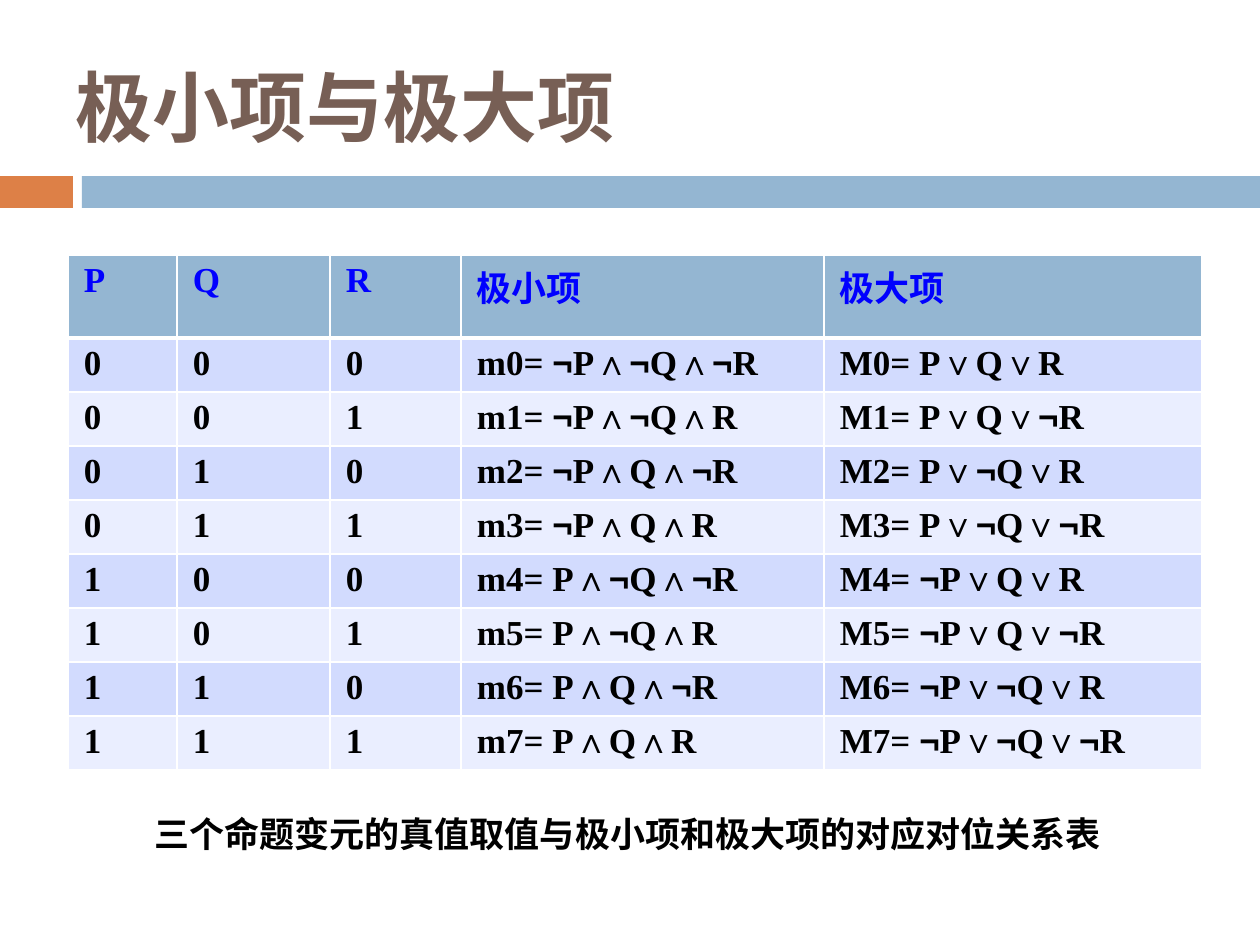
import itertools

import lxml.etree
import pptx
import pptx.dml.color
import pptx.enum.shapes
import pptx.enum.text
import pptx.oxml.ns
import pptx.util

TITLE = "极小项与极大项"
CAPTION = "三个命题变元的真值取值与极小项和极大项的对应对位关系表"
VARIABLES = ["P", "Q", "R"]
HEADERS = VARIABLES + ["极小项", "极大项"]
COLUMN_WIDTHS = [109, 153, 131, 363, 378]
HEADER_HEIGHT, ROW_HEIGHT = 83, 52
TABLE_LEFT, TABLE_TOP = 68, 255
BARS = [(0, 73, "DD8047"), (82, 1178, "94B6D2")]
BAR_TOP, BAR_HEIGHT = 176, 32
HEADER_FILL = "94B6D2"
ROW_FILLS = ["D2DBFE", "EAEEFF"]


def px(length):
    return pptx.util.Emu(length * 914400 // 126)


def color(value):
    return pptx.dml.color.RGBColor.from_string(value)


def write(frame, text, size=20, font="Times New Roman", ink="000000"):
    """Write one bold paragraph, with each ¬ in a run of its own in Arial."""
    para = frame.paragraphs[0]
    for is_negation, letters in itertools.groupby(text, lambda letter: letter == "¬"):
        span = para.add_run()
        span.text = "".join(letters)
        span.font.size = pptx.util.Pt(size)
        span.font.bold = True
        span.font.name = "Arial" if is_negation else font
        span.font.color.rgb = color(ink)


def add_text(slide, left, top, width, height, text, **text_format):
    box = slide.shapes.add_textbox(px(left), px(top), px(width), px(height))
    box.text_frame.word_wrap = True
    write(box.text_frame, text, **text_format)
    return box


def set_borders(cell, **widths):
    """Draw white borders; widths maps a side (L, R, T, B) to points."""
    properties = cell._tc.get_or_add_tcPr()
    for index, (side, points) in enumerate(widths.items()):
        line = lxml.etree.Element(
            pptx.oxml.ns.qn(f"a:ln{side}"), w=str(pptx.util.Pt(points))
        )
        fill = lxml.etree.SubElement(line, pptx.oxml.ns.qn("a:solidFill"))
        lxml.etree.SubElement(fill, pptx.oxml.ns.qn("a:srgbClr"), val="FFFFFF")
        properties.insert(index, line)


def term(bits, negated_bit, operator):
    return operator.join(
        ("¬" if bit == negated_bit else "") + name
        for name, bit in zip(VARIABLES, bits)
    )


def truth_rows():
    for index, bits in enumerate(itertools.product([0, 1], repeat=len(VARIABLES))):
        minterm = f"m{index}= {term(bits, 0, '∧')}"
        maxterm = f"M{index}= {term(bits, 1, '∨')}"
        yield [str(bit) for bit in bits] + [minterm, maxterm]


def add_truth_table(slide):
    rows = [HEADERS, *truth_rows()]
    heights = [HEADER_HEIGHT] + [ROW_HEIGHT] * (len(rows) - 1)
    table = slide.shapes.add_table(
        len(rows), len(HEADERS), px(TABLE_LEFT), px(TABLE_TOP),
        px(sum(COLUMN_WIDTHS)), px(sum(heights)),
    ).table
    for column, width in zip(table.columns, COLUMN_WIDTHS):
        column.width = px(width)
    for row_index, (values, height) in enumerate(zip(rows, heights)):
        table.rows[row_index].height = px(height)
        is_header = row_index == 0
        fill = HEADER_FILL if is_header else ROW_FILLS[(row_index - 1) % 2]
        for column_index, value in enumerate(values):
            cell = table.cell(row_index, column_index)
            cell.margin_left = cell.margin_right = px(16)
            cell.margin_top = cell.margin_bottom = px(6)
            cell.fill.solid()
            cell.fill.fore_color.rgb = color(fill)
            set_borders(
                cell, L=1, R=1, T=3 if row_index == 1 else 1, B=3 if is_header else 1
            )
            write(cell.text_frame, value, ink="0000FF" if is_header else "000000")


def main():
    deck = pptx.Presentation()
    deck.slide_width, deck.slide_height = px(1260), px(945)
    slide = deck.slides.add_slide(deck.slide_layouts[6])

    for left, width, fill in BARS:
        bar = slide.shapes.add_shape(
            pptx.enum.shapes.MSO_SHAPE.RECTANGLE,
            px(left), px(BAR_TOP), px(width), px(BAR_HEIGHT),
        )
        bar.shadow.inherit = False
        bar.fill.solid()
        bar.fill.fore_color.rgb = color(fill)
        bar.line.fill.background()

    title = add_text(
        slide, 63, 16, 1197, 179, TITLE, size=44, font="Calibri", ink="775F55"
    )
    title.text_frame.vertical_anchor = pptx.enum.text.MSO_ANCHOR.MIDDLE
    add_truth_table(slide)
    add_text(slide, 134, 806, 1002, 55, " " + CAPTION, font="Arial")
    deck.save("out.pptx")


if __name__ == "__main__":
    main()
